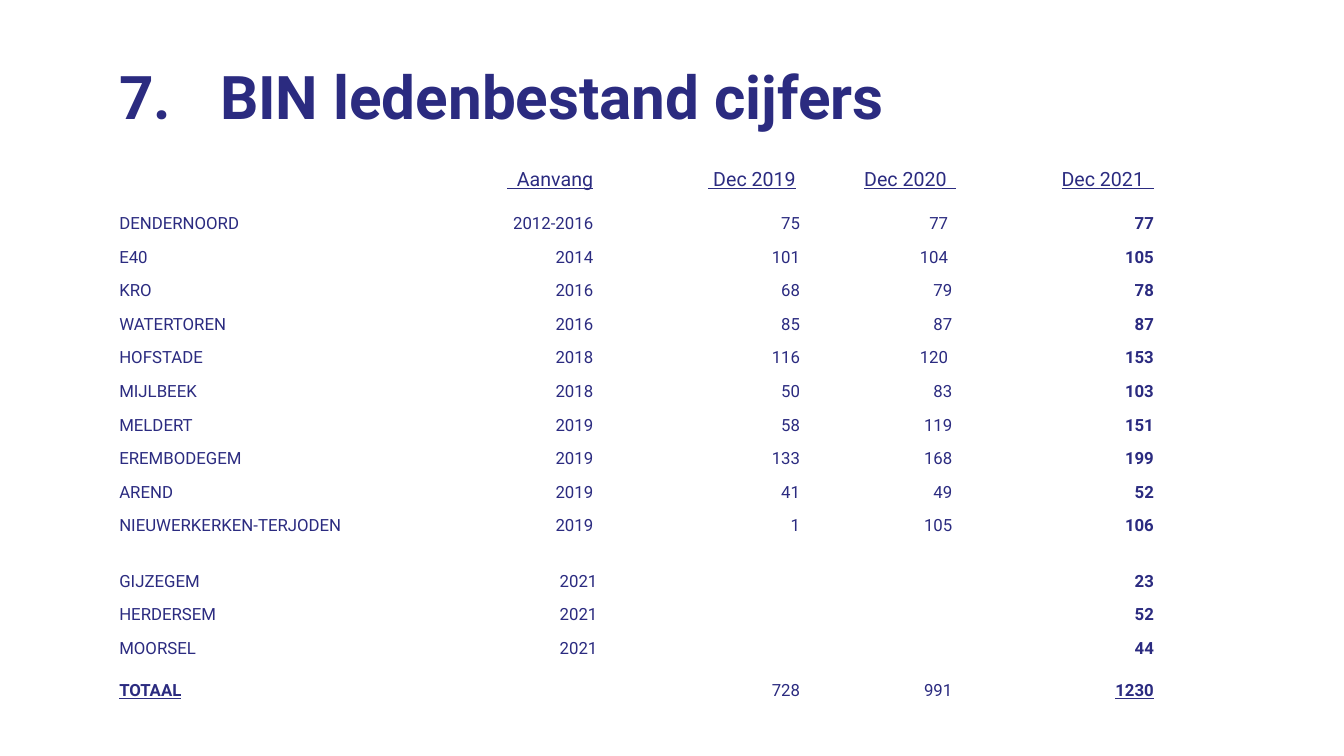
from dataclasses import dataclass

from pptx import Presentation
from pptx.dml.color import RGBColor
from pptx.enum.text import MSO_ANCHOR, PP_ALIGN
from pptx.util import Pt

PX = 9525  # EMU per px, 96 px to the inch
FONT = "Roboto"
COLORS = {"navy": "2B2B80"}

LEFT, WIDTH = 104, 1009
TITLE_TOP, TITLE_H = 59, 72
TABLE_TOP = 155
COLUMNS = (249, 226, 193, 153, 188)
HEAD_H, ROW_H, GAP_H, TOTAL_H = 44, 32, 53, 40
HEAD_INSET = 14
INSETS = (10, 14, 10, 18, 14)  # right inset of each column


@dataclass
class Row:
    cells: tuple[str, ...]
    height: int = ROW_H
    insets: tuple[int, ...] = INSETS
    size: int = 12
    bold: tuple[int, ...] = (4,)
    underline: tuple[int, ...] = ()


WIDE_2020 = (10, 14, 10, 22, 14)
NEW_TEAM = (10, 10, 10, 18, 14)

ROWS = [
    Row(("", "  Aanvang", " Dec 2019", "Dec 2020  ", "Dec 2021  "), HEAD_H,
        (HEAD_INSET,) * 5, 14, (), (1, 2, 3, 4)),
    Row(("DENDERNOORD", "2012-2016", "75", "77", "77"), insets=WIDE_2020),
    Row(("E40", "2014", "101", "104", "105"), insets=WIDE_2020),
    Row(("KRO", "2016", "68", "79", "78")),
    Row(("WATERTOREN", "2016", "85", "87", "87")),
    Row(("HOFSTADE", "2018", "116", "120", "153"), insets=WIDE_2020),
    Row(("MIJLBEEK", "2018", "50", "83", "103")),
    Row(("MELDERT", "2019", "58", "119", "151")),
    Row(("EREMBODEGEM", "2019", "133", "168", "199")),
    Row(("AREND", "2019", "41", "49", "52")),
    Row(("NIEUWERKERKEN-TERJODEN", "2019", "1", "105", "106"), GAP_H),
    Row(("GIJZEGEM", "2021", "", "", "23"), insets=NEW_TEAM),
    Row(("HERDERSEM", "2021", "", "", "52"), insets=NEW_TEAM),
    Row(("MOORSEL", "2021", "", "", "44"), TOTAL_H, NEW_TEAM),
    Row(("TOTAAL", "", "728", "991", "1230"), TOTAL_H,
        bold=(0, 4), underline=(0, 4)),
]


def px(n: int) -> int:
    return n * PX


def style(p, size: int, bold: bool, underline: bool = False) -> None:
    font = p.font
    font.name, font.size = FONT, Pt(size)
    font.bold, font.underline = bold, underline
    font.color.rgb = RGBColor.from_string(COLORS["navy"])


def add_title(s, text: str) -> None:
    sp = s.shapes.title
    sp.left, sp.top = px(LEFT), px(TITLE_TOP)
    sp.width, sp.height = px(WIDTH), px(TITLE_H)
    tf = sp.text_frame
    tf.word_wrap = True
    tf.vertical_anchor = MSO_ANCHOR.MIDDLE
    p = tf.paragraphs[0]
    p.text = text
    p.alignment = PP_ALIGN.LEFT
    p.line_spacing = 0.9
    style(p, 43, True)


def fill_cell(cell, row: Row, col: int) -> None:
    cell.fill.background()
    cell.vertical_anchor = MSO_ANCHOR.TOP
    cell.margin_right = px(row.insets[col])
    if not row.cells[col]:
        cell.margin_top = cell.margin_bottom = 0
    p = cell.text_frame.paragraphs[0]
    p.text = row.cells[col]
    p.alignment = PP_ALIGN.RIGHT if col else PP_ALIGN.LEFT
    style(p, row.size, col in row.bold, col in row.underline)


def add_members_table(s, rows: list[Row]) -> None:
    height = sum(row.height for row in rows)
    table = s.shapes.add_table(len(rows), len(COLUMNS), px(LEFT),
                               px(TABLE_TOP), px(WIDTH), px(height)).table
    table.first_row = table.horz_banding = False
    for column, width in zip(table.columns, COLUMNS):
        column.width = px(width)
    for line, row in zip(table.rows, rows):
        line.height = px(row.height)
        for col, cell in enumerate(line.cells):
            fill_cell(cell, row, col)


def main() -> None:
    prs = Presentation()
    prs.slide_width, prs.slide_height = px(1280), px(720)
    s = prs.slides.add_slide(prs.slide_layouts[5])
    # Member counts per team
    add_members_table(s, ROWS)
    # Heading
    add_title(s, "7.\tBIN ledenbestand cijfers")
    prs.save("out.pptx")


if __name__ == "__main__":
    main()
